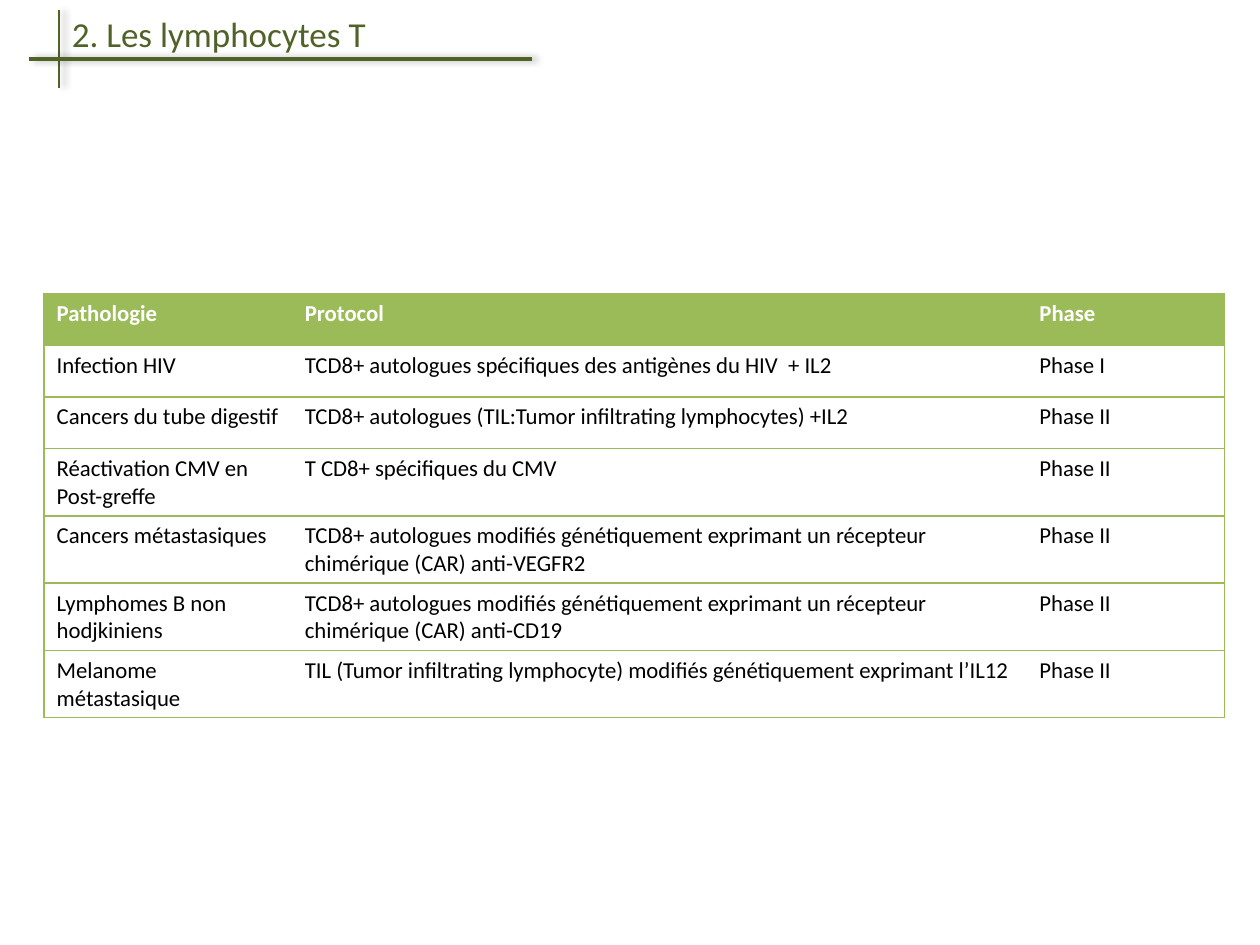
from dataclasses import dataclass

from lxml import etree
from pptx import Presentation
from pptx.dml.color import RGBColor
from pptx.enum.shapes import MSO_CONNECTOR
from pptx.enum.text import MSO_ANCHOR, MSO_AUTO_SIZE, PP_ALIGN
from pptx.oxml.ns import qn
from pptx.util import Inches, Pt

STRAIGHT = MSO_CONNECTOR.STRAIGHT
TOP = MSO_ANCHOR.TOP
FIT_SHAPE = MSO_AUTO_SIZE.SHAPE_TO_FIT_TEXT
LEFT = PP_ALIGN.LEFT

TITLE = "2. Les lymphocytes T"
HEADERS = ("Pathologie", "Protocol", "Phase")
CAR = "TCD8+ autologues modifiés génétiquement exprimant un récepteur chimérique (CAR) anti-"
TRIALS = (
    ("Infection HIV", "TCD8+ autologues spécifiques des antigènes du HIV  + IL2", "Phase I"),
    ("Cancers du tube digestif",
     "TCD8+ autologues (TIL:Tumor infiltrating lymphocytes) +IL2", "Phase II"),
    ("Réactivation CMV en Post-greffe", "T CD8+ spécifiques du CMV", "Phase II"),
    ("Cancers métastasiques", CAR + "VEGFR2", "Phase II"),
    ("Lymphomes B non hodjkiniens", CAR + "CD19", "Phase II"),
    ("Melanome métastasique",
     "TIL (Tumor infiltrating lymphocyte) modifiés génétiquement exprimant l’IL12", "Phase II"),
)


@dataclass(frozen=True)
class Theme:
    font: str = "Calibri"
    title: str = "4F6228"
    accent: str = "9BBB59"
    text: str = "000000"
    light: str = "FFFFFF"
    title_size: float = 20
    cell_size: float = 13
    line_width: float = 0.9


def write(tf, text, *, font, size, color, bold=False):
    p = tf.paragraphs[0]
    p.alignment = LEFT
    r = p.add_run()
    r.text = text
    r.font.name = font
    r.font.size = Pt(size)
    r.font.bold = bold
    r.font.color.rgb = RGBColor.from_string(color)


def add_color(parent, color):
    fill = etree.SubElement(parent, qn("a:solidFill"))
    return etree.SubElement(fill, qn("a:srgbClr"), val=color)


class SlideBuilder:
    def __init__(self, slide, theme):
        self.s = slide
        self.theme = theme

    def title(self, text, x, y, w, h):
        sp = self.s.shapes.title
        sp.left, sp.top, sp.width, sp.height = map(Inches, (x, y, w, h))
        tf = sp.text_frame
        tf.word_wrap = True
        tf.auto_size = FIT_SHAPE
        tf.vertical_anchor = TOP
        write(tf, text, font=self.theme.font, size=self.theme.title_size,
              color=self.theme.title)

    def line(self, x1, y1, x2, y2, width):
        sp = self.s.shapes.add_connector(STRAIGHT, *map(Inches, (x1, y1, x2, y2)))
        sp.line.color.rgb = RGBColor.from_string(self.theme.title)
        sp.line.width = Pt(width)
        effects = etree.SubElement(sp._element.spPr, qn("a:effectLst"))
        shadow = etree.SubElement(effects, qn("a:outerShdw"), blurRad=str(Pt(4)),
                                  dist=str(Pt(3)), dir="0", rotWithShape="0")
        color = etree.SubElement(shadow, qn("a:srgbClr"), val=self.theme.text)
        etree.SubElement(color, qn("a:alpha"), val="40000")

    def borders(self, cell, left, right):
        tc_pr = cell._tc.get_or_add_tcPr()
        for side, drawn in (("L", left), ("R", right), ("T", True), ("B", True)):
            ln = etree.SubElement(tc_pr, qn(f"a:ln{side}"), w=str(Pt(self.theme.line_width)))
            if drawn:
                add_color(ln, self.theme.accent)
            else:
                etree.SubElement(ln, qn("a:noFill"))

    def cell(self, cell, text, header, first, last):
        theme = self.theme
        self.borders(cell, first, last)
        if header:
            cell.fill.solid()
            cell.fill.fore_color.rgb = RGBColor.from_string(theme.accent)
        else:
            cell.fill.background()
        write(cell.text_frame, text, font=theme.font, size=theme.cell_size,
              color=theme.light if header else theme.text, bold=header)

    def table(self, rows, x, y, widths, row_height):
        frame = self.s.shapes.add_table(
            len(rows), len(widths), Inches(x), Inches(y),
            Inches(sum(widths)), Inches(row_height * len(rows)))
        table = frame.table
        table.horz_banding = False
        for column, width in zip(table.columns, widths):
            column.width = Inches(width)
        for i, values in enumerate(rows):
            table.rows[i].height = Inches(row_height)
            for j, text in enumerate(values):
                self.cell(table.cell(i, j), text, header=i == 0,
                          first=j == 0, last=j == len(widths) - 1)


def main():
    prs = Presentation()
    prs.slide_width, prs.slide_height = Inches(10), Inches(7.5)
    theme = Theme()
    builder = SlideBuilder(prs.slides.add_slide(prs.slide_layouts[5]), theme)
    builder.line(0.47, 0.08, 0.47, 0.7, theme.line_width)
    builder.title(TITLE, 0.47, 0.05, 4.92, 0.44)
    builder.line(0.23, 0.47, 4.22, 0.47, 0)
    builder.table((HEADERS, *TRIALS), 0.35, 2.33, (1.97, 5.83, 1.57), 0.41)
    prs.save("out.pptx")


if __name__ == "__main__":
    main()
